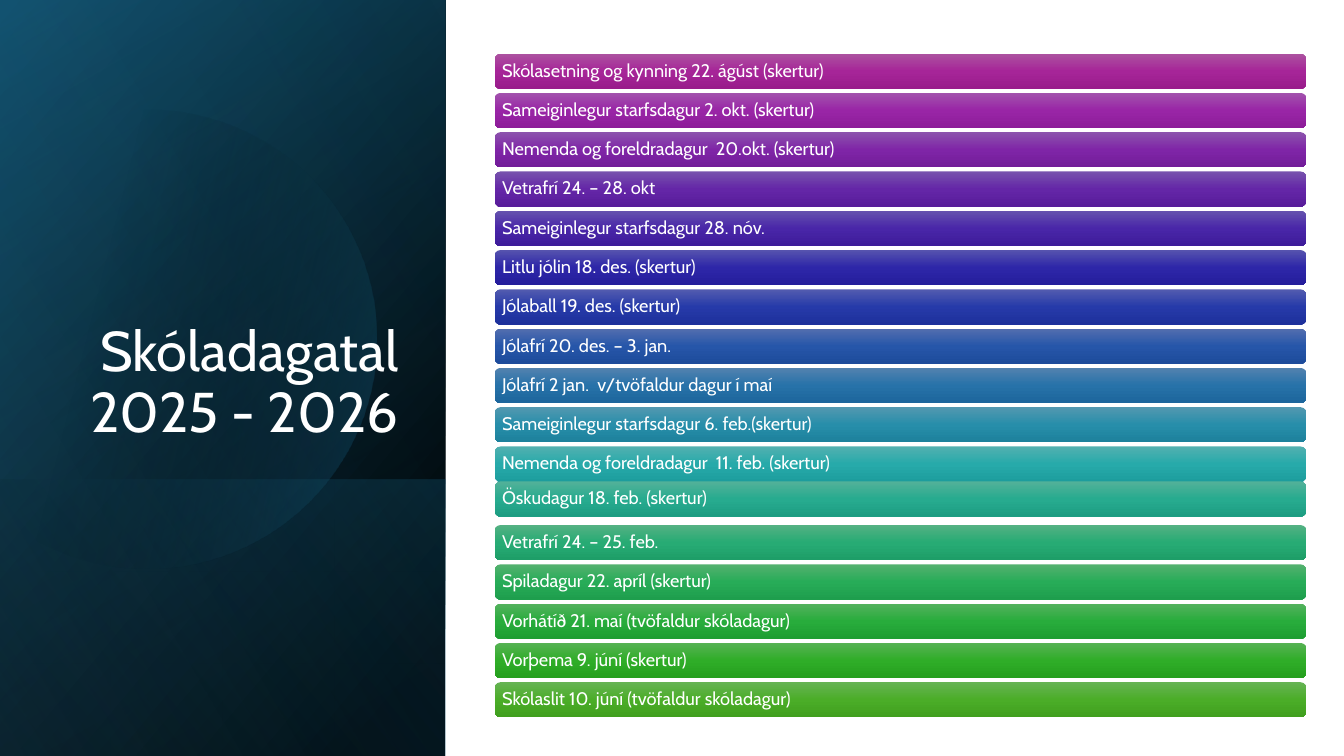
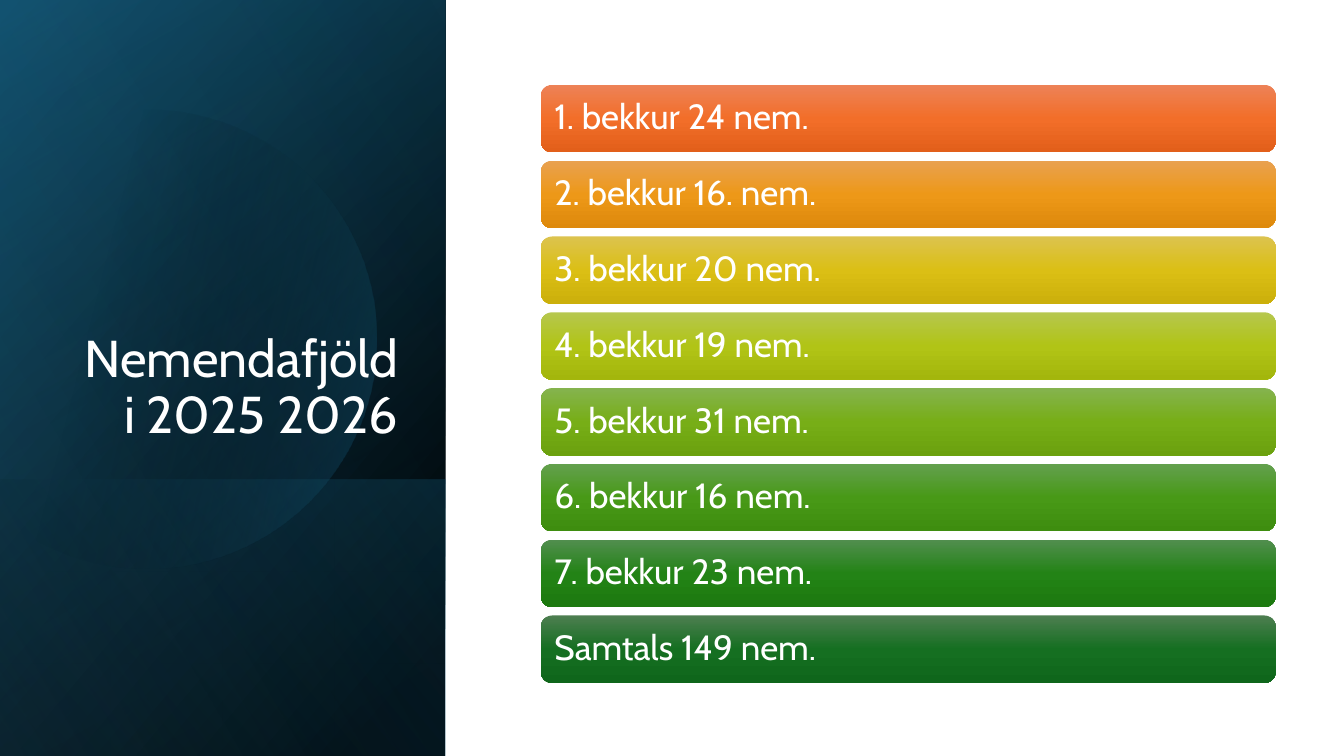
from math import acos, cos, sin

from lxml.etree import SubElement
from pptx import Presentation
from pptx.dml.color import RGBColor
from pptx.enum.shapes import MSO_SHAPE
from pptx.enum.text import MSO_ANCHOR, MSO_AUTO_SIZE, PP_ALIGN
from pptx.oxml.ns import qn
from pptx.util import Cm, Pt

FONT = "Cabin"
WHITE = "FFFFFF"
SLIDE_W, SLIDE_H, PANEL_W = 33.87, 19.05, 11.22
CIRCLE_X, CIRCLE_Y, CIRCLE_R = 3.7, 8.55, 5.78

PANEL_LAYERS = [
    ("rect", SLIDE_H, 50, [(8, "000000", 100), (100, "104862", 100)]),
    ("rect", SLIDE_H, 30, [(0, "000000", 0), (99, "156082", 46)]),
    ("rect", 6.96, 130, [(2, "156082", 29), (100, "000000", 30)]),
    ("circle", None, 14, [(29, "000000", 0), (100, "156082", 43)]),
    ("rect", SLIDE_H, 120, [(0, "000000", 0), (99, "46B1E1", 11)]),
]

CALENDAR = [
    ("Skólasetning og kynning 22. ágúst (skertur)", "AC53A0", "A62598", "991C8B"),
    ("Sameiginlegur starfsdagur 2. okt. (skertur)", "A253AD", "9925A6", "8D1C99"),
    ("Nemenda og foreldradagur  20.okt. (skertur)", "8C53AD", "7F25A7", "721C99"),
    ("Vetrafrí 24. – 28. okt", "7753AD", "6426A7", "581C9A"),
    ("Sameiginlegur starfsdagur 28. nóv.", "6553AE", "4926A8", "3E1C9A"),
    ("Litlu jólin 18. des. (skertur)", "5653AE", "2D26A8", "241D9B"),
    ("Jólaball 19. des. (skertur)", "535CAF", "263AA9", "1D309B"),
    ("Jólafrí 20. des. – 3. jan.", "536EAF", "2656A9", "1D4B9B"),
    ("Jólafrí 2 jan.  v/tvöfaldur dagur í maí", "5382AF", "2772A9", "1D669C"),
    ("Sameiginlegur starfsdagur 6. feb.(skertur)", "5398B0", "278EAA", "1D819C"),
    ("Nemenda og foreldradagur  11. feb. (skertur)", "53B0B0", "27AAAA", "1D9D9D"),
    ("Öskudagur 18. feb. (skertur)", "53B199", "27AB8F", "1D9D82"),
    ("Vetrafrí 24. – 25. feb.", "54B183", "27AB74", "1E9E68"),
    ("Spiladagur 22. apríl (skertur)", "54B16F", "27AC58", "1E9E4D"),
    ("Vorhátíð 21. maí (tvöfaldur skóladagur)", "54B25E", "28AC3C", "1E9E32"),
    ("Vorþema 9. júní (skertur)", "57B254", "2FAD28", "259F1E"),
    ("Skólaslit 10. júní (tvöfaldur skóladagur)", "66B354", "4BAD28", "409F1E"),
]

CLASSES = [
    ("1. bekkur 24 nem.", "ED8257", "F26E29", "E25F1A"),
    ("2. bekkur 16. nem.", "E9A150", "ED9818", "DE890B"),
    ("3. bekkur 20 nem.", "DCC34E", "DBBF15", "CBAF0A"),
    ("4. bekkur 19 nem.", "B6C74E", "B1C416", "A3B60C"),
    ("5. bekkur 31 nem.", "85B34E", "77AE17", "6BA10E"),
    ("6. bekkur 16 nem.", "63A04E", "489917", "3E8D0F"),
    ("7. bekkur 23 nem.", "518E4E", "238316", "1C790F"),
    ("Samtals 149 nem.", "4D7E50", "156F21", "0F661B"),
]

SLIDES = [
    {"title": "Skóladagatal 2025 - 2026", "title_size": 40, "bars": CALENDAR,
     "left": 12.47, "top": 1.35, "width": 20.45, "height": 0.89, "pitch": 0.99,
     "size": 13, "inset": 0.14, "nudges": {"Öskudagur 18. feb. (skertur)": -0.11}},
    {"title": "Nemendafjöldi 2025 2026", "title_size": 37, "bars": CLASSES,
     "left": 13.63, "top": 2.14, "width": 18.52, "height": 1.7, "pitch": 1.91,
     "size": 25, "inset": 0.26, "nudges": {}},
]


def fill_gradient(sp, angle, stops):
    sp.shadow.inherit = False
    sp.fill.gradient()
    grad = sp._element.spPr.find(qn("a:gradFill"))
    for child in list(grad):
        grad.remove(child)
    grad.set("rotWithShape", "1")
    gs_lst = SubElement(grad, qn("a:gsLst"))
    for pos, color, alpha in stops:
        gs = SubElement(gs_lst, qn("a:gs"), pos=str(pos * 1000))
        clr = SubElement(gs, qn("a:srgbClr"), val=color)
        if alpha < 100:
            SubElement(clr, qn("a:alpha"), val=str(alpha * 1000))
    SubElement(grad, qn("a:lin"), ang=str(angle * 60000), scaled="0")
    sp.line.fill.background()


def write_text(tf, text, size, align, anchor):
    tf.word_wrap = True
    tf.auto_size = MSO_AUTO_SIZE.NONE
    tf.vertical_anchor = anchor
    tf.text = text
    p = tf.paragraphs[0]
    p.alignment = align
    p.line_spacing = 0.9
    p.font.size = Pt(size)
    p.font.name = FONT
    p.font.color.rgb = RGBColor.from_string(WHITE)


prs = Presentation()
prs.slide_width, prs.slide_height = Cm(SLIDE_W), Cm(SLIDE_H)

cut = acos(-CIRCLE_X / CIRCLE_R)
angles = [cut * step / 40 for step in range(-40, 41)]
arc = [(Cm(CIRCLE_X + CIRCLE_R * cos(a)), Cm(CIRCLE_Y + CIRCLE_R * sin(a))) for a in angles]

for page in SLIDES:
    s = prs.slides.add_slide(prs.slide_layouts[5])

    for kind, depth, angle, stops in PANEL_LAYERS:
        if kind == "rect":
            left = (PANEL_W - depth) / 2
            top = SLIDE_H - (depth + PANEL_W) / 2
            sp = s.shapes.add_shape(MSO_SHAPE.RECTANGLE, Cm(left), Cm(top), Cm(depth), Cm(PANEL_W))
            sp.rotation = 90
            sp._element.spPr.xfrm.set("flipH", "1")
        else:
            builder = s.shapes.build_freeform(*arc[0])
            builder.add_line_segments(arc[1:], close=True)
            sp = builder.convert_to_shape()
        fill_gradient(sp, angle, stops)

    title = s.shapes.title
    title.left, title.top, title.width, title.height = Cm(1.63), Cm(4.67), Cm(8.66), Cm(6.65)
    write_text(title.text_frame, page["title"], page["title_size"], PP_ALIGN.RIGHT, MSO_ANCHOR.BOTTOM)
    s.shapes._spTree.append(title._element)

    for i, (text, light, mid, dark) in enumerate(page["bars"]):
        top = page["top"] + i * page["pitch"] + page["nudges"].get(text, 0)
        sp = s.shapes.add_shape(MSO_SHAPE.ROUNDED_RECTANGLE, Cm(page["left"]), Cm(top),
                                Cm(page["width"]), Cm(page["height"]))
        fill_gradient(sp, 90, [(0, light, 100), (50, mid, 100), (100, dark, 100)])
        tf = sp.text_frame
        tf.margin_left = tf.margin_right = tf.margin_top = tf.margin_bottom = Cm(page["inset"])
        write_text(tf, text, page["size"], PP_ALIGN.LEFT, MSO_ANCHOR.MIDDLE)

prs.save("out.pptx")
